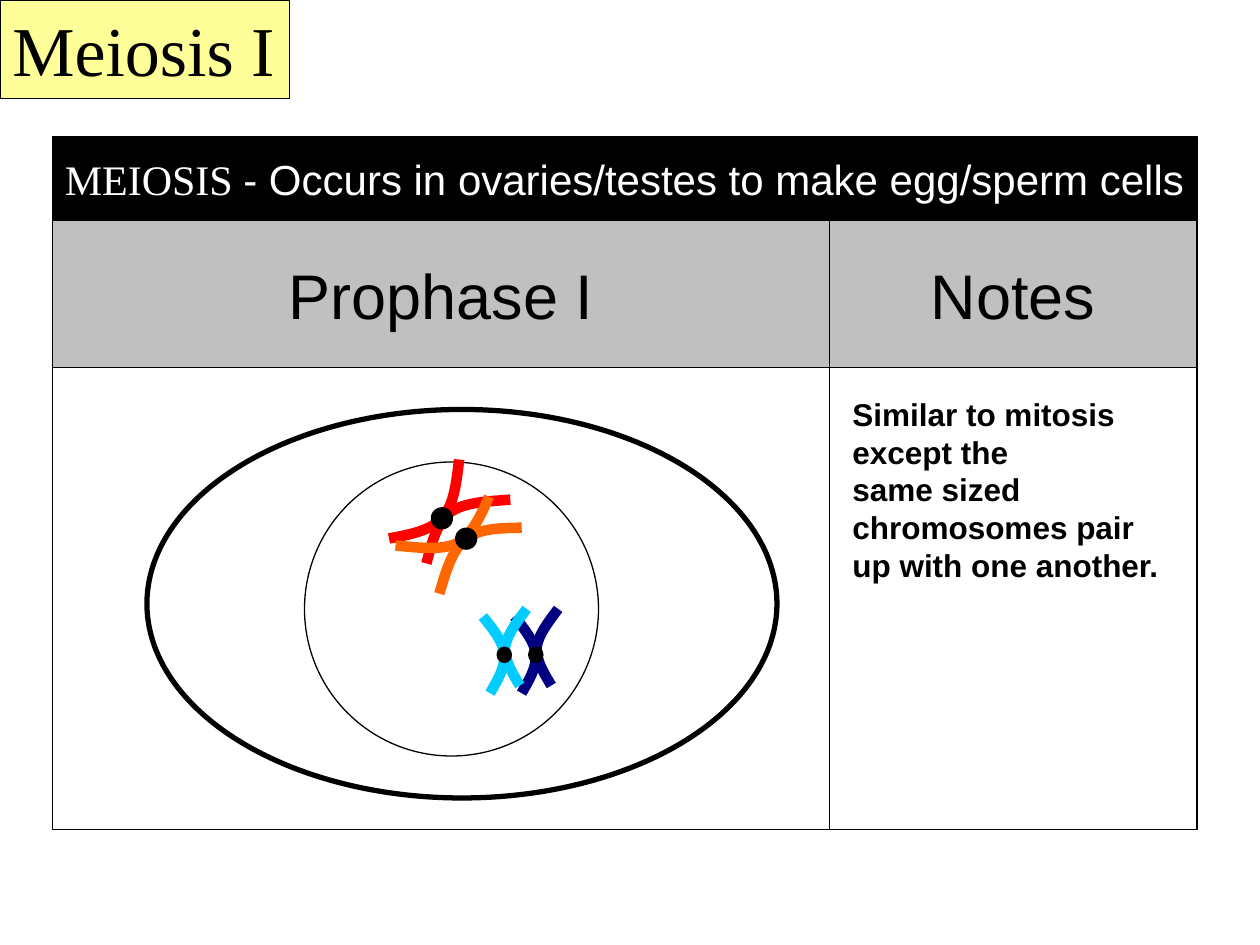
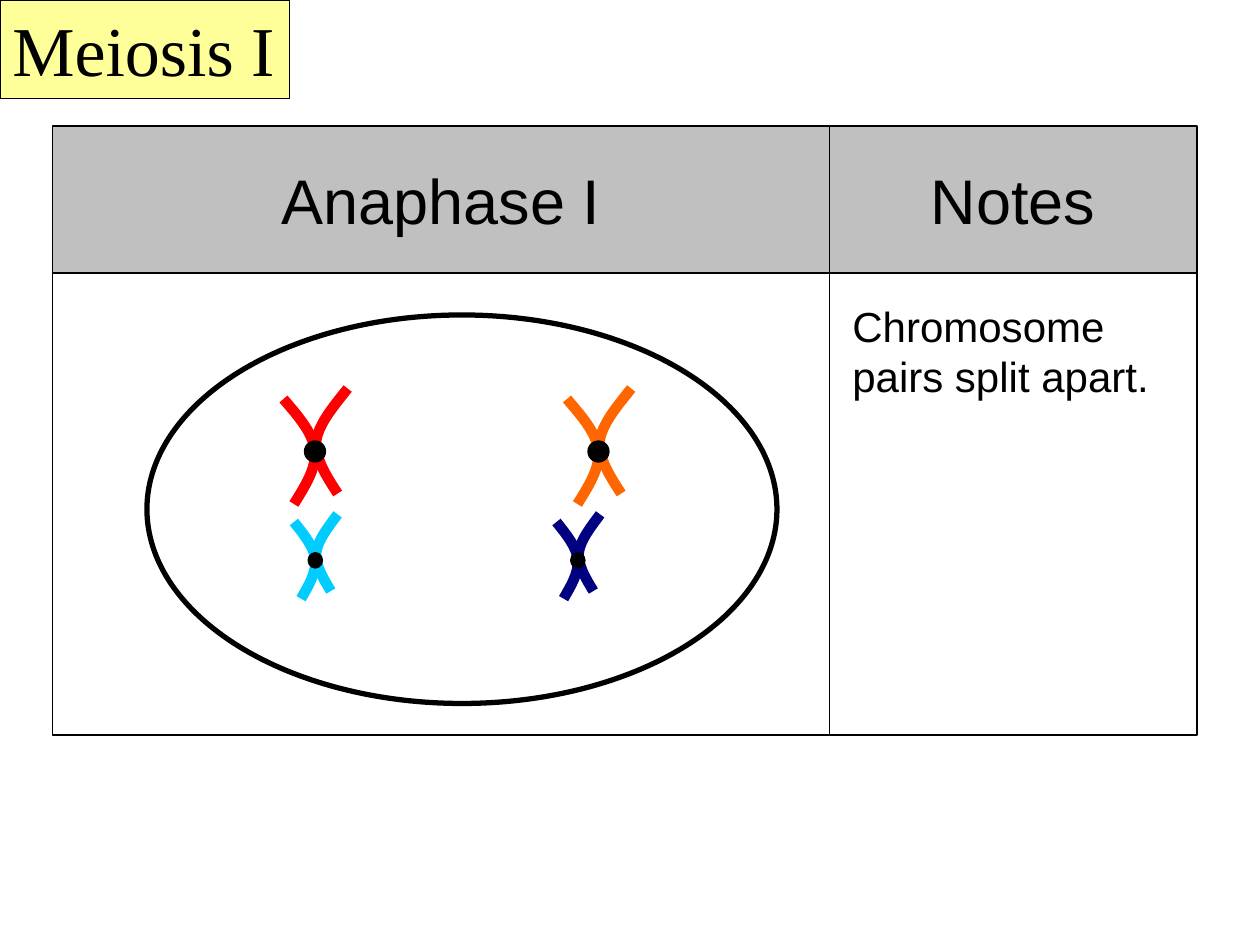
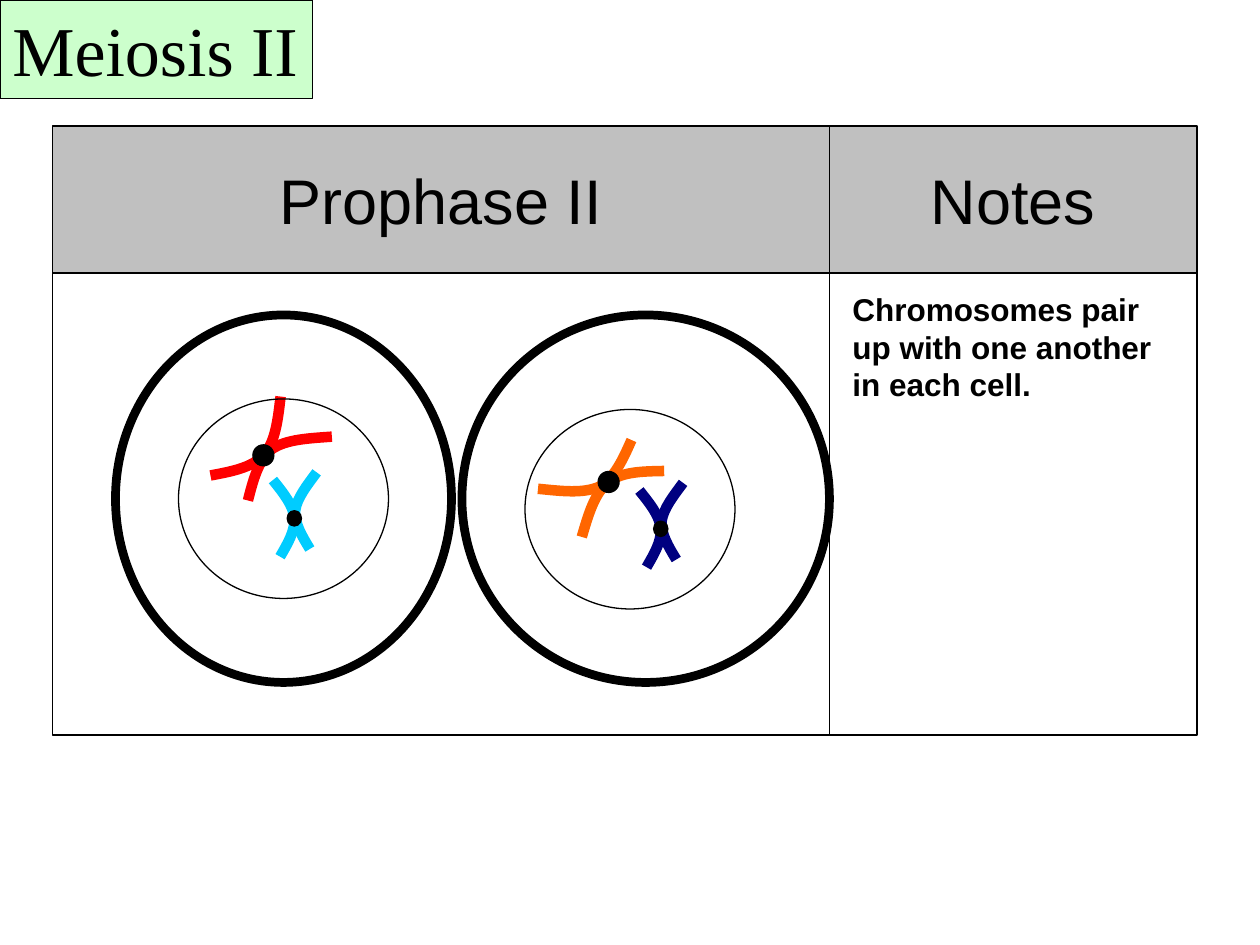
from dataclasses import dataclass
from math import cos, radians, sin

from lxml import etree
from pptx import Presentation
from pptx.dml.color import RGBColor
from pptx.enum.shapes import MSO_SHAPE
from pptx.enum.text import MSO_ANCHOR, MSO_AUTO_SIZE, PP_ALIGN
from pptx.oxml.ns import qn
from pptx.util import Pt

RECTANGLE, OVAL = MSO_SHAPE.RECTANGLE, MSO_SHAPE.OVAL
TOP, MIDDLE = MSO_ANCHOR.TOP, MSO_ANCHOR.MIDDLE
LEFT, CENTER = PP_ALIGN.LEFT, PP_ALIGN.CENTER
GROW = MSO_AUTO_SIZE.SHAPE_TO_FIT_TEXT


@dataclass(frozen=True)
class Theme:
    black: str = "000000"
    white: str = "FFFFFF"
    heading_fill: str = "C0C0C0"
    first_division: str = "FFFF99"
    second_division: str = "CCFFCC"
    red: str = "FF0000"
    orange: str = "FF6600"
    navy: str = "000080"
    cyan: str = "00CCFF"
    sans: str = "Arial"
    serif: str = "Times New Roman"
    title_size: int = 40
    heading_size: int = 36
    large_size: int = 24
    note_size: int = 18
    thin_line: float = 0.75
    cell_line: float = 3
    thick_cell_line: float = 5
    arm_line: float = 6


THEME = Theme()

PANEL_LEFT, PANEL_WIDTH = 30, 444
NOTES_LEFT, NOTES_WIDTH = PANEL_LEFT + PANEL_WIDTH, 210
HEADING_HEIGHT, BODY_HEIGHT = 84, 264
BANNER_HEIGHT = 48

ARMS = (
    ((-18, -30), (-9.4, -20), (-0.7, -10), (0, 0), (0.7, 10), (-5.8, 20), (-12, 30)),
    ((18.7, -36), (10.8, -26), (2.2, -16), (0.7, -6), (0, 4), (6.5, 14), (13, 24)),
)
CENTROMERE_SIZE = 12
LARGE, SMALL = (1, 1), (0.68, 0.73)
RED_TURN, ORANGE_TURN = 47.3, 237


def color(value):
    return RGBColor.from_string(value)


def points(*values):
    return [Pt(value) for value in values]


def style_line(shape, line_color, width):
    shape.shadow.inherit = False
    shape.line.color.rgb = color(line_color)
    shape.line.width = Pt(width)


def add_outlined(shapes, kind, box, fill=None, width=THEME.thin_line):
    shape = shapes.add_shape(kind, *points(*box))
    style_line(shape, THEME.black, width)
    if fill:
        shape.fill.solid()
        shape.fill.fore_color.rgb = color(fill)
    else:
        shape.fill.background()
    return shape


def style_font(font, name, size, font_color=THEME.black, bold=False):
    font.name = name
    font.size = Pt(size)
    font.color.rgb = color(font_color)
    font.bold = bold


def write_label(shape, text, name, size, anchor, alignment):
    frame = shape.text_frame
    frame.word_wrap = False
    frame.vertical_anchor = anchor
    paragraph = frame.paragraphs[0]
    paragraph.text = text
    paragraph.alignment = alignment
    style_font(paragraph.font, name, size)


def add_title(slide, text, width, fill):
    title = add_outlined(slide.shapes, RECTANGLE, (0, 0, width, 56.2), fill)
    write_label(title, text, THEME.serif, THEME.title_size, TOP, LEFT)
    title.text_frame.auto_size = GROW


def add_phase_grid(slide, top, phase):
    columns = ((PANEL_LEFT, PANEL_WIDTH, phase), (NOTES_LEFT, NOTES_WIDTH, "Notes"))
    for left, width, _ in columns:
        add_outlined(slide.shapes, RECTANGLE, (left, top + HEADING_HEIGHT, width, BODY_HEIGHT))
    for left, width, text in columns:
        heading = add_outlined(
            slide.shapes, RECTANGLE, (left, top, width, HEADING_HEIGHT), THEME.heading_fill
        )
        write_label(heading, text, THEME.sans, THEME.heading_size, MIDDLE, CENTER)


def add_banner(slide, top, lead, rest):
    box = (PANEL_LEFT, top, PANEL_WIDTH + NOTES_WIDTH, BANNER_HEIGHT)
    banner = add_outlined(slide.shapes, RECTANGLE, box, THEME.black)
    frame = banner.text_frame
    frame.word_wrap = False
    frame.vertical_anchor = MIDDLE
    paragraph = frame.paragraphs[0]
    paragraph.alignment = LEFT
    for text, name in ((lead, THEME.serif), (rest, THEME.sans)):
        run = paragraph.add_run()
        run.text = text
        style_font(run.font, name, THEME.large_size, THEME.white)


def add_notes(slide, box, lines, size=THEME.note_size, bold=True):
    frame = slide.shapes.add_textbox(*points(*box)).text_frame
    frame.word_wrap = True
    frame.auto_size = GROW
    frame.text = "\n".join(lines)
    for paragraph in frame.paragraphs:
        style_font(paragraph.font, THEME.sans, size, bold=bold)


def add_cell(slide, box, width=THEME.cell_line):
    add_outlined(slide.shapes, OVAL, box, width=width)


def turn_lines_into_curves(shape):
    outline = shape.element.find(".//" + qn("a:path"))
    segments = outline.findall(qn("a:lnTo"))
    for start in range(0, len(segments), 3):
        curve = etree.SubElement(outline, qn("a:cubicBezTo"))
        for segment in segments[start:start + 3]:
            curve.append(segment[0])
            outline.remove(segment)


def add_arm(shapes, center, arm, arm_color, angle):
    middle_x, middle_y = [(min(axis) + max(axis)) / 2 for axis in zip(*arm)]
    cosine, sine = cos(radians(angle)), sin(radians(angle))
    shift_x = center[0] + middle_x * cosine - middle_y * sine - middle_x
    shift_y = center[1] + middle_x * sine + middle_y * cosine - middle_y
    outline = [points(x + shift_x, y + shift_y) for x, y in arm]
    builder = shapes.build_freeform(*outline[0])
    builder.add_line_segments(outline[1:], close=False)
    chromatid = builder.convert_to_shape()
    turn_lines_into_curves(chromatid)
    chromatid.rotation = angle
    chromatid.fill.background()
    style_line(chromatid, arm_color, THEME.arm_line)


def add_chromosome(slide, center, arm_color, scale=LARGE, angle=0):
    shapes = slide.shapes.add_group_shape().shapes
    scale_x, scale_y = scale
    for arm in ARMS:
        scaled_arm = [(x * scale_x, y * scale_y) for x, y in arm]
        add_arm(shapes, center, scaled_arm, arm_color, angle)
    width, height = CENTROMERE_SIZE * scale_x, CENTROMERE_SIZE * scale_y
    box = (center[0] - width / 2, center[1] - height / 2, width, height)
    add_outlined(shapes, OVAL, box, THEME.black).rotation = angle


def build_prophase_one(slide):
    add_phase_grid(slide, 126, "Prophase I")
    add_cell(slide, (84, 234, 360, 222))
    add_cell(slide, (174, 264, 168, 168), THEME.thin_line)
    add_chromosome(slide, (252.5, 296.2), THEME.red, angle=RED_TURN)
    add_chromosome(slide, (266.4, 307.8), THEME.orange, angle=ORANGE_TURN)
    add_chromosome(slide, (306.2, 374.2), THEME.navy, SMALL)
    add_chromosome(slide, (288.2, 374.2), THEME.cyan, SMALL)
    add_notes(slide, (480, 222, 198, 116.6), (
        "Similar to mitosis except the",
        "same sized chromosomes pair up with one another.",
    ))
    add_title(slide, "Meiosis I", 165.6, THEME.first_division)
    add_banner(slide, 78, "MEIOSIS ", "- Occurs in ovaries/testes to make egg/sperm cells")


def build_anaphase_one(slide):
    add_phase_grid(slide, 72, "Anaphase I")
    add_cell(slide, (84, 180, 360, 222))
    add_chromosome(slide, (180, 258), THEME.red)
    add_chromosome(slide, (342, 258), THEME.orange)
    add_chromosome(slide, (330.2, 320.2), THEME.navy, SMALL)
    add_chromosome(slide, (180.2, 320.2), THEME.cyan, SMALL)
    add_notes(
        slide, (480, 168, 186, 65.5), ("Chromosome pairs split apart.",), THEME.large_size, False
    )
    add_title(slide, "Meiosis I", 165.6, THEME.first_division)


def build_prophase_two(slide):
    add_phase_grid(slide, 72, "Prophase II")
    add_chromosome(slide, (150.5, 260.2), THEME.red, angle=RED_TURN)
    add_chromosome(slide, (347.8, 275.4), THEME.orange, angle=ORANGE_TURN)
    add_chromosome(slide, (377.6, 302.2), THEME.navy, SMALL)
    add_chromosome(slide, (168.2, 296.2), THEME.cyan, SMALL)
    add_title(slide, "Meiosis II", 178.8, THEME.second_division)
    for nucleus in ((102, 228, 120, 114), (300, 234, 120, 114)):
        add_cell(slide, nucleus, THEME.thin_line)
    for cell in ((66, 180, 192, 210), (264, 180, 210, 210)):
        add_cell(slide, cell, THEME.thick_cell_line)
    add_notes(
        slide, (480, 162, 198, 94.3), ("Chromosomes pair up with one another in each cell.",)
    )


def main():
    presentation = Presentation()
    presentation.slide_width, presentation.slide_height = points(720, 540)
    blank_layout = presentation.slide_layouts[6]
    for build in (build_prophase_one, build_anaphase_one, build_prophase_two):
        build(presentation.slides.add_slide(blank_layout))
    presentation.save("out.pptx")


if __name__ == "__main__":
    main()
